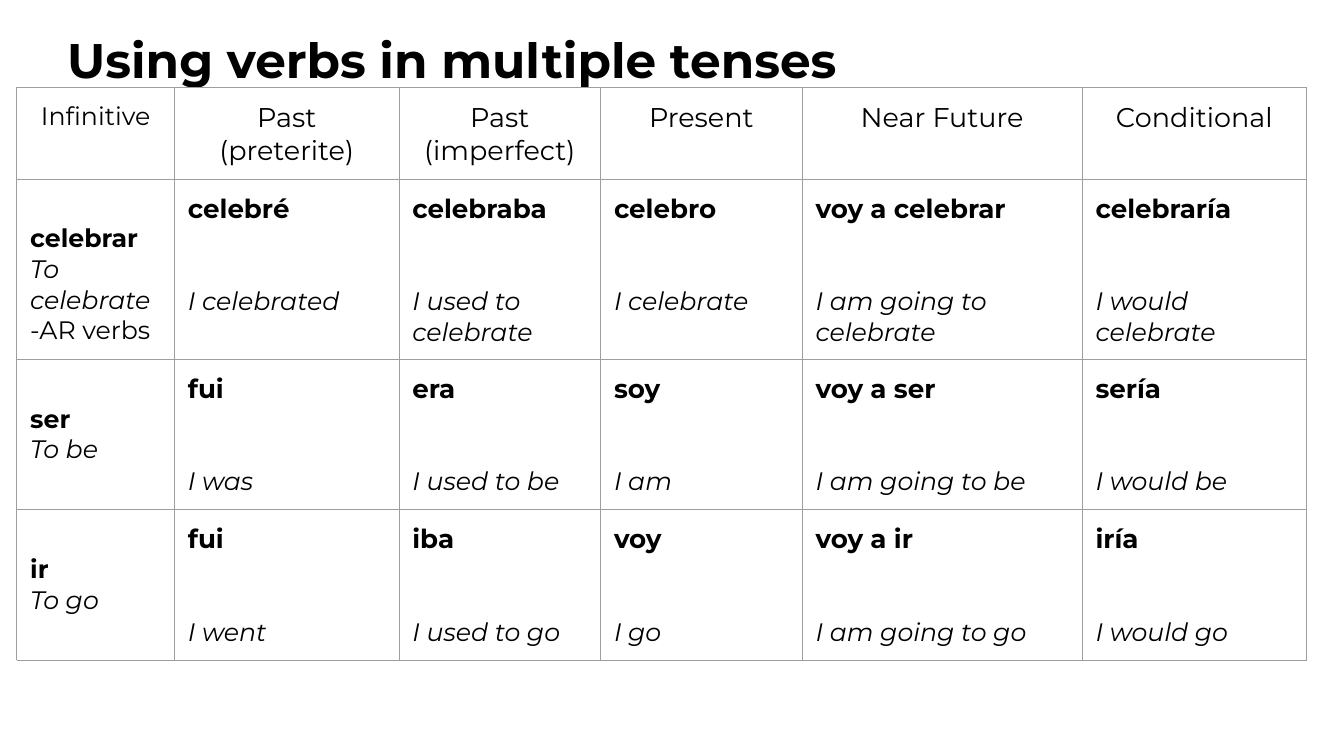
"""Build a slide with a table of Spanish verbs in several tenses."""
from dataclasses import dataclass

from lxml import etree
from pptx import Presentation
from pptx.dml.color import RGBColor
from pptx.enum import text
from pptx.oxml import ns
from pptx.util import Pt

FONT = "Montserrat"
BLACK, WHITE, GRID = "000000", "FFFFFF", "9E9E9E"
MARGIN = 14.4
LINE = 33
COLUMN_WIDTHS = [169, 240.5, 216, 216, 300, 240.5]
ROW_HEIGHTS = [98, 192, 160, 160]
TENSES = ["Infinitive", "Past (preterite)", "Past (imperfect)",
          "Present", "Near Future", "Conditional"]


@dataclass
class Verb:
    infinitive: str
    meaning: str
    forms: list[tuple[str, str]]
    ending: str = ""


VERBS = [
    Verb("celebrar", "To celebrate", [
        ("celebré", "I celebrated"),
        ("celebraba", "I used to celebrate"),
        ("celebro", "I celebrate"),
        ("voy a celebrar", "I am going to celebrate"),
        ("celebraría", "I would celebrate"),
    ], "-AR verbs"),
    Verb("ser", "To be", [
        ("fui", "I was"),
        ("era", "I used to be"),
        ("soy", "I am"),
        ("voy a ser", "I am going to be"),
        ("sería", "I would be"),
    ]),
    Verb("ir", "To go", [
        ("fui", "I went"),
        ("iba", "I used to go"),
        ("voy", "I go"),
        ("voy a ir", "I am going to go"),
        ("iría", "I would go"),
    ]),
]


def color(value: str) -> RGBColor:
    return RGBColor.from_string(value)


def write(frame, words: str, size: float = 27, bold: bool = False,
          italic: bool = False, centered: bool = False,
          before: float = 0, spacing: float = 1.0) -> None:
    first = frame.paragraphs[0]
    para = frame.add_paragraph() if first.runs else first
    para.alignment = text.PP_ALIGN.CENTER if centered else text.PP_ALIGN.LEFT
    para.line_spacing = spacing
    if before:
        para.space_before = Pt(before)
    span = para.add_run()
    span.text = words
    font = span.font
    font.name, font.size = FONT, Pt(size)
    font.bold, font.italic = bold, italic
    font.color.rgb = color(BLACK)


def style_cell(cell, top: float = MARGIN) -> None:
    cell.margin_left = cell.margin_right = cell.margin_bottom = Pt(MARGIN)
    cell.margin_top = Pt(top)
    cell.vertical_anchor = text.MSO_ANCHOR.TOP
    properties = cell._tc.get_or_add_tcPr()
    for side in ("a:lnL", "a:lnR", "a:lnT", "a:lnB"):
        border = etree.SubElement(properties, ns.qn(side), w=str(Pt(0.75)))
        fill = etree.SubElement(border, ns.qn("a:solidFill"))
        etree.SubElement(fill, ns.qn("a:srgbClr"), val=GRID)
    cell.fill.solid()
    cell.fill.fore_color.rgb = color(WHITE)


def draw_title(page, words: str) -> None:
    box = page.shapes.add_textbox(Pt(72), Pt(22.3), Pt(1295), Pt(128))
    frame = box.text_frame
    frame.word_wrap = True
    frame.margin_left = frame.margin_right = 0
    frame.margin_top = frame.margin_bottom = 0
    write(frame, words, size=52, bold=True, spacing=1.15)


def draw_verb(table, row: int, verb: Verb) -> None:
    cell = table.cell(row, 0)
    style_cell(cell, top=MARGIN + LINE)
    write(cell.text_frame, verb.infinitive, bold=True)
    write(cell.text_frame, verb.meaning, italic=True)
    if verb.ending:
        write(cell.text_frame, verb.ending)
    for column, (form, translation) in enumerate(verb.forms, start=1):
        cell = table.cell(row, column)
        style_cell(cell)
        write(cell.text_frame, form, size=28, bold=True)
        write(cell.text_frame, translation, italic=True, before=2 * LINE)


def draw_table(page) -> None:
    table = page.shapes.add_table(
        len(ROW_HEIGHTS), len(COLUMN_WIDTHS), Pt(18), Pt(93.6),
        Pt(sum(COLUMN_WIDTHS)), Pt(sum(ROW_HEIGHTS))).table
    table.first_row = table.horz_banding = False
    for column, width in zip(table.columns, COLUMN_WIDTHS):
        column.width = Pt(width)
    for row, height in zip(table.rows, ROW_HEIGHTS):
        row.height = Pt(height)
    for column, tense in enumerate(TENSES):
        cell = table.cell(0, column)
        style_cell(cell)
        write(cell.text_frame, tense, size=29 if column else 27, centered=True)
    for row, verb in enumerate(VERBS, start=1):
        draw_verb(table, row, verb)


def main() -> None:
    deck = Presentation()
    deck.slide_width, deck.slide_height = Pt(1440), Pt(810)
    page = deck.slides.add_slide(deck.slide_layouts[6])
    draw_title(page, "Using verbs in multiple tenses")
    draw_table(page)
    deck.save("out.pptx")


if __name__ == "__main__":
    main()
